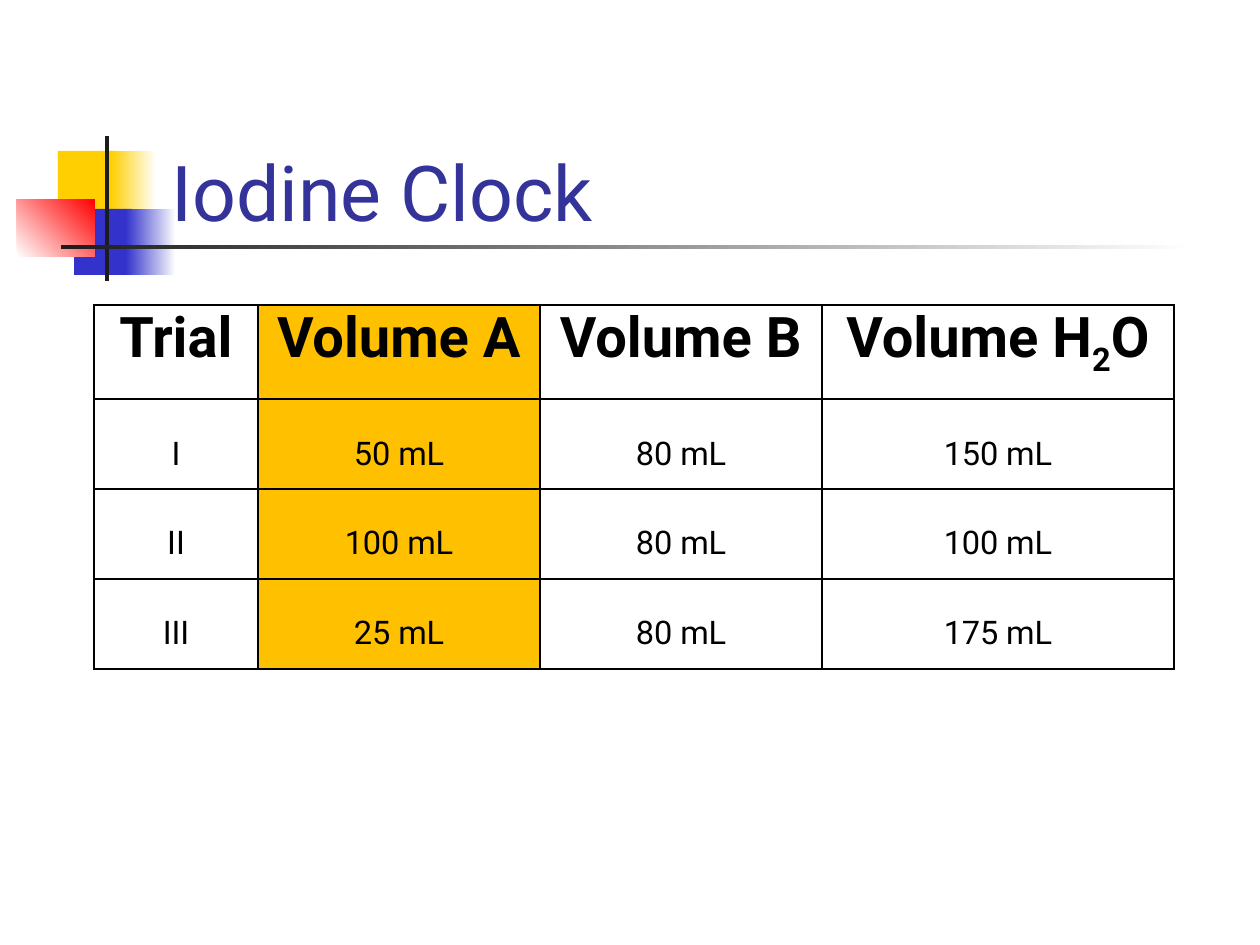
from dataclasses import dataclass

from lxml.etree import SubElement
from pptx import Presentation
from pptx.dml.color import RGBColor
from pptx.enum.shapes import MSO_SHAPE
from pptx.enum.text import MSO_ANCHOR, PP_ALIGN
from pptx.oxml import parse_xml
from pptx.oxml.ns import nsdecls, qn
from pptx.util import Pt

EMU_PER_PX = 914400 / 126


def px(length):
    return round(length * EMU_PER_PX)


@dataclass(frozen=True)
class Theme:
    font: str = "Roboto"
    title: str = "333399"
    ink: str = "000000"
    paper: str = "FFFFFF"
    yellow: str = "FFCF01"
    blue: str = "3333CC"
    red: str = "FF0000"
    bar: str = "1C1C1C"
    highlight: str = "FFC000"
    title_size: int = 44
    table_size: int = 32
    border_width: int = 1


class SlideBuilder:
    def __init__(self, page, theme):
        self.page = page
        self.theme = theme

    def style_span(self, span, size, color, bold=False, subscript=False):
        span.font.name = self.theme.font
        span.font.size = Pt(size)
        span.font.bold = bold
        span.font.color.rgb = RGBColor.from_string(color)
        if subscript:
            span.font._element.set("baseline", "-25000")

    def block(self, left, top, width, height, *colors, angle=0):
        """Draw a rectangle: one color is solid, two make a gradient."""
        box = self.page.shapes.add_shape(
            MSO_SHAPE.RECTANGLE, px(left), px(top), px(width), px(height))
        box.shadow.inherit = False
        box.line.fill.background()
        if len(colors) == 1:
            box.fill.solid()
            box.fill.fore_color.rgb = RGBColor.from_string(colors[0])
        else:
            box.fill.gradient()
            box.fill.gradient_angle = angle
            for stop, color in zip(box.fill.gradient_stops, colors):
                stop.color.rgb = RGBColor.from_string(color)

    def title(self, text, left, top, width, height):
        box = self.page.shapes.add_textbox(px(left), px(top), px(width), px(height))
        frame = box.text_frame
        frame.word_wrap = True
        frame.vertical_anchor = MSO_ANCHOR.BOTTOM
        frame.text = text
        self.style_span(frame.paragraphs[0].runs[0],
                        self.theme.title_size, self.theme.title)

    def cell_borders(self, cell):
        properties = cell._tc.get_or_add_tcPr()
        for index, side in enumerate(("lnL", "lnR", "lnT", "lnB")):
            line = parse_xml(f'<a:{side} {nsdecls("a")}/>')
            line.set("w", str(Pt(self.theme.border_width)))
            fill = SubElement(line, qn("a:solidFill"))
            SubElement(fill, qn("a:srgbClr")).set("val", self.theme.ink)
            properties.insert(index, line)

    def cell(self, cell, pieces, header, highlighted):
        cell.margin_left = cell.margin_right = px(4)
        cell.margin_top = cell.margin_bottom = 0
        if highlighted:
            cell.fill.solid()
            cell.fill.fore_color.rgb = RGBColor.from_string(self.theme.highlight)
        else:
            cell.fill.background()
        self.cell_borders(cell)

        para = cell.text_frame.paragraphs[0]
        para.alignment = PP_ALIGN.CENTER
        para.space_before = Pt(13.2)
        para.space_after = Pt(1.9)
        for index, piece in enumerate(pieces):
            span = para.add_run()
            span.text = piece
            # Body values are lowered, as is every second piece of a header
            self.style_span(span, self.theme.table_size, self.theme.ink,
                            bold=header, subscript=not header or index % 2 == 1)

    def table(self, rows, left, top, widths, heights, highlighted_column):
        table = self.page.shapes.add_table(
            len(rows), len(widths), px(left), px(top),
            px(sum(widths)), px(sum(heights))).table
        table.first_row = table.horz_banding = False
        for column, width in zip(table.columns, widths):
            column.width = px(width)
        for row, height in zip(table.rows, heights):
            row.height = px(height)
        for r, values in enumerate(rows):
            for c, pieces in enumerate(values):
                self.cell(table.cell(r, c), pieces, r == 0, c == highlighted_column)


def main():
    deck = Presentation()
    deck.slide_width, deck.slide_height = px(1260), px(945)
    theme = Theme()
    slide = SlideBuilder(deck.slides.add_slide(deck.slide_layouts[6]), theme)

    # Colored squares and crossing bars
    slide.block(58, 151, 60, 66, theme.yellow)
    slide.block(111, 151, 45, 66, theme.yellow, theme.paper)
    slide.block(74, 209, 58, 66, theme.blue)
    slide.block(126, 209, 50, 66, theme.blue, theme.paper)
    slide.block(17, 199, 78, 58, theme.paper, theme.red, angle=45)
    slide.block(105, 136, 4, 145, theme.bar)
    slide.block(61, 245, 1134, 4, theme.bar, theme.paper)

    # Heading
    slide.title("Iodine Clock", 159, 86, 1073, 157)

    # Trial volumes
    header = [("Trial",), ("Volume A",), ("Volume B",), ("Volume H", "2", "O")]
    trials = [
        ("I", 50, 80, 150),
        ("II", 100, 80, 100),
        ("III", 25, 80, 175),
    ]
    body = [[(name,)] + [(f"{volume} mL",) for volume in volumes]
            for name, *volumes in trials]
    slide.table([header] + body, 94, 305, widths=(164, 282, 282, 352),
                heights=(94, 90, 90, 90), highlighted_column=1)

    deck.save("out.pptx")


if __name__ == "__main__":
    main()
